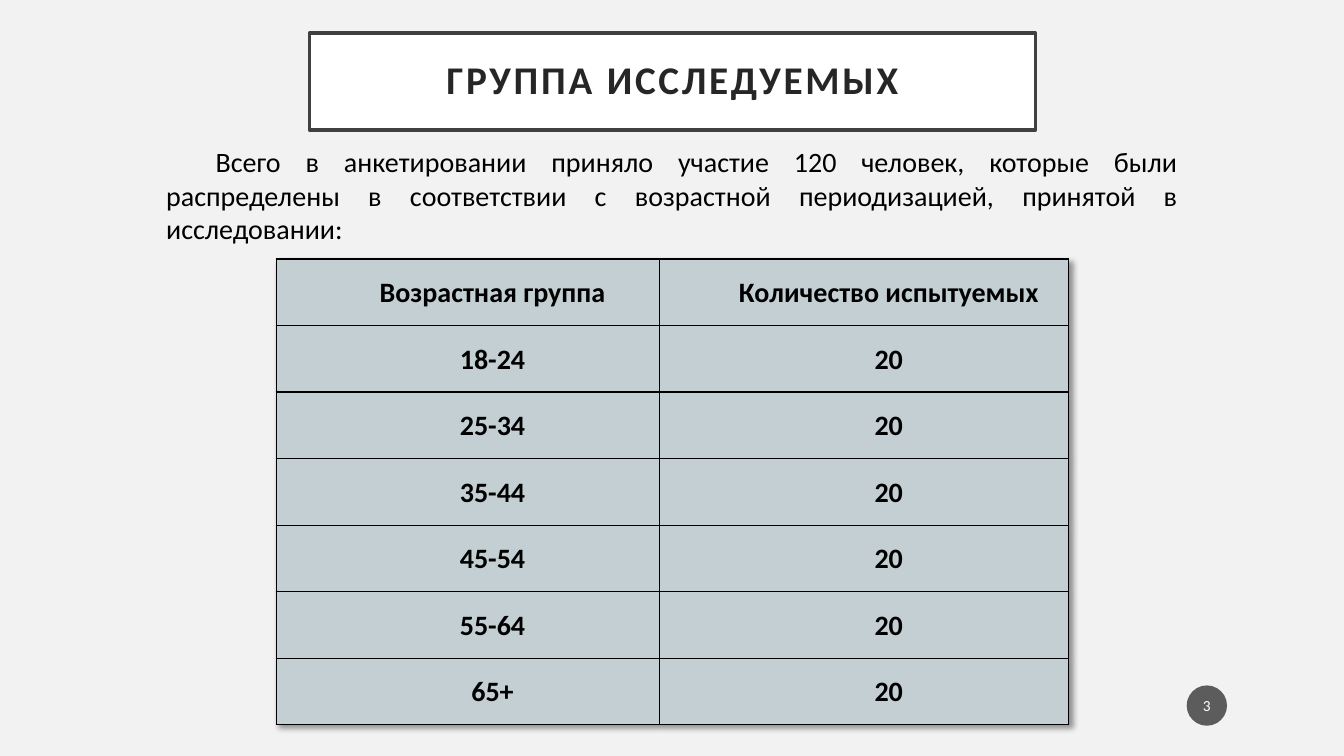
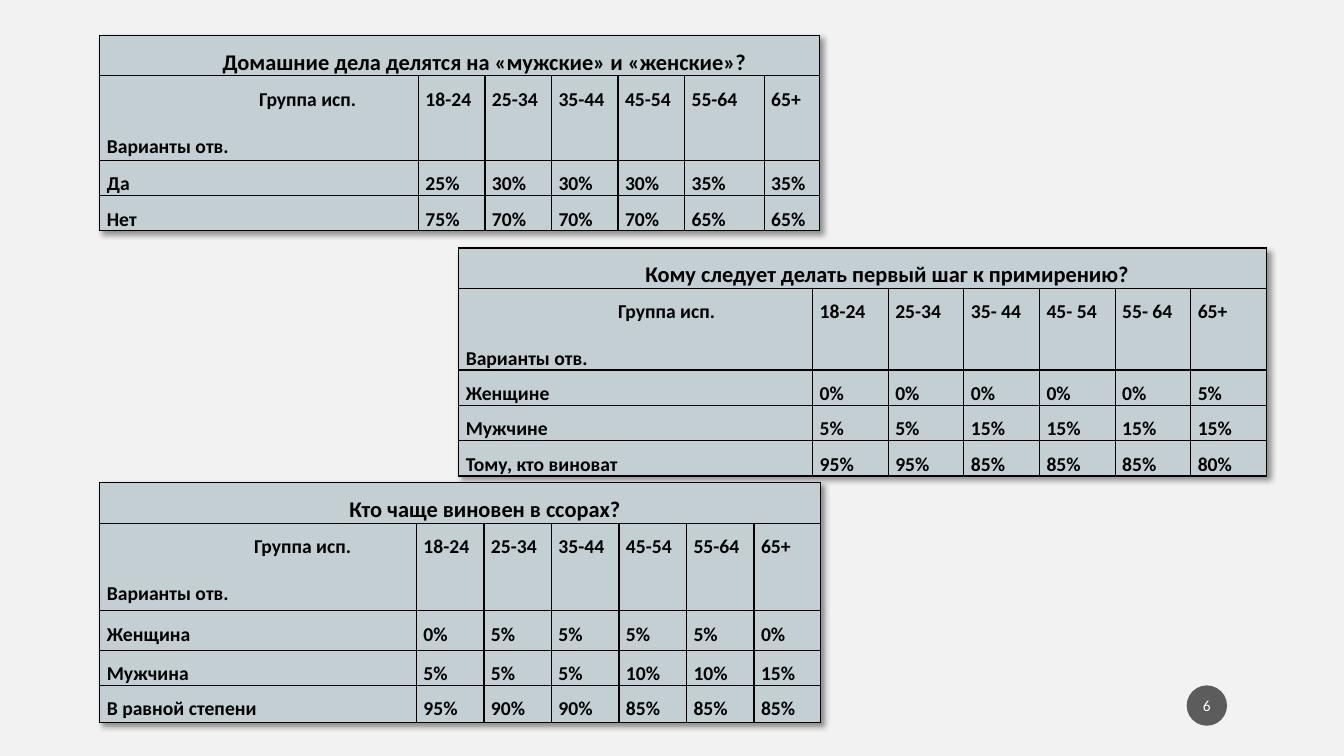
from dataclasses import dataclass

from lxml import etree
from pptx import Presentation
from pptx import util as u
from pptx.dml.color import RGBColor
from pptx.enum import shapes, text
from pptx.oxml import ns

ALIGN = text.PP_ALIGN
MIDDLE = text.MSO_ANCHOR.MIDDLE


@dataclass(frozen=True)
class Theme:
    font: str = "Calibri"
    background: str = "F2F2F2"
    panel: str = "FFFFFF"
    frame: str = "404040"
    heading: str = "262626"
    body: str = "000000"
    cell: str = "C3CFD3"
    badge: str = "1D1D1D"
    title_size: int = 28
    body_size: int = 20
    question_size: int = 16
    answer_size: int = 14
    badge_size: int = 11
    indent: float = 0.49


THEME = Theme()

AGE_GROUPS = ["18-24", "25-34", "35-44", "45-54", "55-64", "65+"]
SPACED_GROUPS = ["18-24", "25-34", "35- 44", "45- 54", "55- 64", "65+"]

# Survey questions: answers are listed by age group
SURVEYS = [
    dict(question="Домашние дела делятся на «мужские» и «женские»?",
         left=0.99, top=0.35, groups=AGE_GROUPS, label_indent=1.51,
         widths=[3.16] + [0.66] * 4 + [0.79, 0.55],
         heights=[0.39, 0.84, 0.34, 0.34],
         answers={"Да": [25, 30, 30, 30, 35, 35],
                  "Нет": [75, 70, 70, 70, 65, 65]}),
    dict(question="Кому следует делать первый шаг к примирению?",
         left=4.55, top=2.46, groups=SPACED_GROUPS, label_indent=1.51,
         widths=[3.51] + [0.75] * 6,
         heights=[0.37, 0.8] + [0.32] * 3,
         answers={"Женщине": [0, 0, 0, 0, 0, 5],
                  "Мужчине": [5, 5, 15, 15, 15, 15],
                  "Тому, кто виноват": [95, 95, 85, 85, 85, 80]}),
    dict(question="Кто чаще виновен в ссорах?",
         left=0.99, top=4.79, groups=AGE_GROUPS, label_indent=1.46,
         widths=[3.14] + [0.67] * 5 + [0.66],
         heights=[0.4, 0.87, 0.39, 0.35, 0.37],
         answers={"Женщина": [0, 5, 5, 5, 5, 0],
                  "Мужчина": [5, 5, 5, 10, 10, 15],
                  "В равной степени": [95, 90, 90, 85, 85, 85]}),
]


def apply(target, **values):
    for name, value in values.items():
        setattr(target, name, value)


def add_node(parent, tag, **attributes):
    node = etree.SubElement(parent, ns.qn(tag))
    for name, value in attributes.items():
        node.set(name, str(value))
    return node


def fill_with(owner, color):
    owner.fill.solid()
    owner.fill.fore_color.rgb = RGBColor.from_string(color)


def set_insets(owner, horizontal, vertical):
    apply(owner, margin_left=u.Inches(horizontal), margin_right=u.Inches(horizontal),
          margin_top=u.Inches(vertical), margin_bottom=u.Inches(vertical))


def write(paragraph, words, size, color=THEME.body, bold=False, indent=0, **layout):
    """Put one styled run in a paragraph; layout holds paragraph properties."""
    run = paragraph.add_run()
    run.text = words
    apply(run.font, name=THEME.font, size=u.Pt(size), bold=bold)
    run.font.color.rgb = RGBColor.from_string(color)
    apply(paragraph, **layout)
    if indent:
        properties = paragraph._p.get_or_add_pPr()
        properties.set("marL", "0")
        properties.set("indent", str(u.Inches(indent)))
    return run


# Shared slide parts
def new_slide(deck):
    slide = deck.slides.add_slide(deck.slide_layouts[6])
    fill_with(slide.background, THEME.background)
    return slide


def add_panel(slide, kind, box, color, insets):
    panel = slide.shapes.add_shape(kind, *map(u.Inches, box))
    panel.shadow.inherit = False
    fill_with(panel, color)
    apply(panel.text_frame, vertical_anchor=MIDDLE, word_wrap=True)
    set_insets(panel.text_frame, *insets)
    return panel


def add_title(slide, words):
    title = add_panel(slide, shapes.MSO_SHAPE.RECTANGLE, (3.07, 0.33, 7.2, 0.96),
                      THEME.panel, (0.2, 0.2))
    title.line.color.rgb = RGBColor.from_string(THEME.frame)
    title.line.width = u.Pt(2.5)
    run = write(title.text_frame.paragraphs[0], words, THEME.title_size,
                THEME.heading, bold=True, alignment=ALIGN.CENTER, line_spacing=0.9)
    run.font._element.set("spc", "200")


def add_page_number(slide, number):
    badge = add_panel(slide, shapes.MSO_SHAPE.OVAL, (11.77, 6.8, 0.4, 0.4),
                      THEME.badge, (0.02, 0.05))
    badge.line.fill.background()
    color = badge._element.spPr.find(ns.qn("a:solidFill"))[0]
    add_node(color, "a:alpha", val=70000)
    write(badge.text_frame.paragraphs[0], str(number), THEME.badge_size,
          THEME.panel, alignment=ALIGN.CENTER)


def add_intro(slide, words):
    intro = slide.shapes.add_textbox(*map(u.Inches, (1.55, 1.38, 10.23, 1.11)))
    apply(intro.text_frame, word_wrap=True, vertical_anchor=MIDDLE)
    write(intro.text_frame.paragraphs[0], words, THEME.body_size,
          indent=THEME.indent, alignment=ALIGN.JUSTIFY)


# Tables
def add_borders(cell):
    properties = cell._tc.get_or_add_tcPr()
    for place, side in enumerate(("a:lnL", "a:lnR", "a:lnT", "a:lnB")):
        border = add_node(properties, side, w=u.Pt(1))
        add_node(add_node(border, "a:solidFill"), "a:srgbClr", val=THEME.body)
        properties.insert(place, border)


def add_table_shadow(table):
    properties = table._tbl.tblPr
    effects = add_node(properties, "a:effectLst")
    shadow = add_node(effects, "a:outerShdw", blurRad=u.Pt(4), dist=u.Pt(3),
                      dir=2700000, algn="tl", rotWithShape=0)
    add_node(add_node(shadow, "a:prstClr", val="black"), "a:alpha", val=40000)
    properties.insert(0, effects)


def add_grid(slide, left, top, widths, heights):
    box = (left, top, sum(widths), sum(heights))
    table = slide.shapes.add_table(len(heights), len(widths),
                                   *map(u.Inches, box)).table
    apply(table, first_row=False, horz_banding=False)
    for column, width in zip(table.columns, widths):
        column.width = u.Inches(width)
    for row, height in zip(table.rows, heights):
        row.height = u.Inches(height)
    for cell in table.iter_cells():
        fill_with(cell, THEME.cell)
        set_insets(cell, 0.07, 0)
        add_borders(cell)
    add_table_shadow(table)
    return table


def write_cell(paragraph, words, size, alignment=ALIGN.JUSTIFY, indent=0):
    write(paragraph, words, size, bold=True, indent=indent, alignment=alignment,
          line_spacing=1.5, space_after=u.Pt(8))


def add_participants(slide):
    rows = [("Возрастная группа", "Количество испытуемых")]
    rows += [(group, "20") for group in AGE_GROUPS]
    table = add_grid(slide, 2.74, 2.57, [3.8, 4.06], [0.66] * len(rows))
    for cell, words in zip(table.iter_cells(), sum(rows, ())):
        write_cell(cell.text_frame.paragraphs[0], words, THEME.body_size,
                   ALIGN.CENTER, THEME.indent)


def add_survey(slide, question, left, top, groups, label_indent, widths, heights,
               answers):
    table = add_grid(slide, left, top, widths, heights)
    # Question across the full width
    heading = table.cell(0, 0)
    heading.merge(table.cell(0, len(widths) - 1))
    write_cell(heading.text_frame.paragraphs[0], question, THEME.question_size,
               ALIGN.CENTER, THEME.indent)
    # Corner cell names both axes
    corner = table.cell(1, 0).text_frame
    write_cell(corner.paragraphs[0], "Группа исп.", THEME.answer_size,
               indent=label_indent)
    write_cell(corner.add_paragraph(), "Варианты отв.", THEME.answer_size)
    # Age groups and shares
    rows = [[None, *groups]]
    rows += [[answer, *(f"{share}%" for share in shares)]
             for answer, shares in answers.items()]
    for row_index, row in enumerate(rows, start=1):
        for column_index, words in enumerate(row):
            if words:
                cell = table.cell(row_index, column_index)
                write_cell(cell.text_frame.paragraphs[0], words, THEME.answer_size)


def main():
    deck = Presentation()
    apply(deck, slide_width=u.Inches(13.33), slide_height=u.Inches(7.5))

    # Participants
    participants = new_slide(deck)
    add_title(participants, "ГРУППА ИССЛЕДУЕМЫХ")
    add_intro(participants, "Всего в анкетировании приняло участие 120 человек, "
              "которые были распределены в соответствии с возрастной "
              "периодизацией, принятой в исследовании:")
    add_participants(participants)
    add_page_number(participants, 3)

    # Survey results
    results = new_slide(deck)
    for survey in SURVEYS:
        add_survey(results, **survey)
    add_page_number(results, 6)

    deck.save("out.pptx")


if __name__ == "__main__":
    main()
